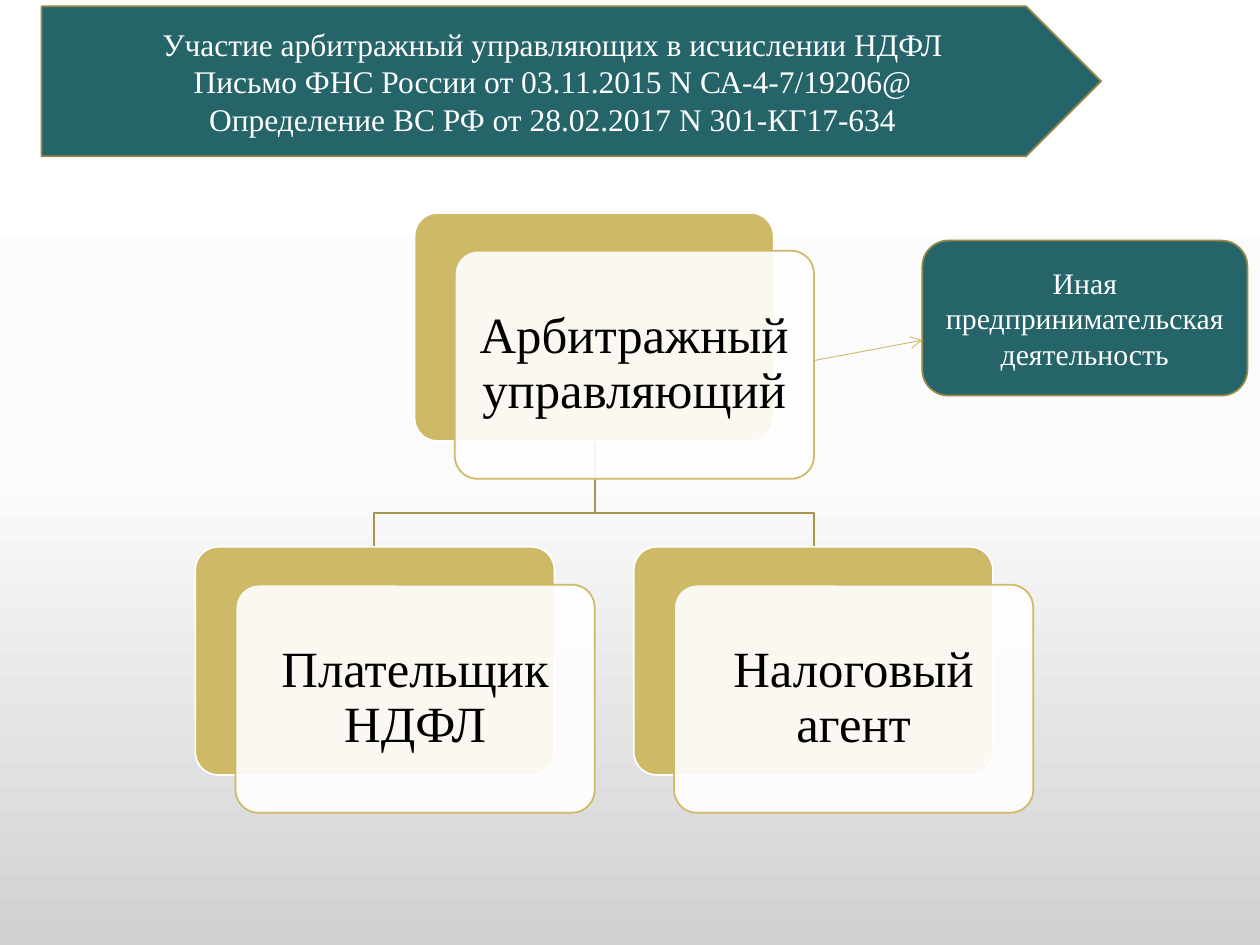
import pptx
import pptx.util
import pptx.dml.color
import pptx.enum.shapes
import pptx.enum.text
import pptx.oxml
import pptx.oxml.ns
import lxml.etree

Inches, Pt = pptx.util.Inches, pptx.util.Pt
Kind = pptx.enum.shapes.MSO_SHAPE
qn = pptx.oxml.ns.qn

HUES = {
    "teal": "256569", "edge": "98894B", "gold": "CEB966", "wire": "A59452",
    "white": "FFFFFF", "black": "000000", "mist": "FBFBFB", "gray": "D1D1D1",
}


def hue(name):
    return pptx.dml.color.RGBColor.from_string(HUES[name])


class Deck:
    face = "Times New Roman"

    def __init__(self, wide, high):
        self.prs = pptx.Presentation()
        self.prs.slide_width, self.prs.slide_height = Inches(wide), Inches(high)
        self.slide = self.prs.slides.add_slide(self.prs.slide_layouts[6])

    def back(self, stops):
        """Fill the background with a gradient from top to bottom."""
        fill = self.slide.background.fill
        fill.gradient()
        fill.gradient_angle = 270
        row = self.slide.element.find(".//" + qn("a:gsLst"))
        for old in list(row):
            row.remove(old)
        for place, name in stops:
            stop = lxml.etree.SubElement(row, qn("a:gs"), pos=str(place * 1000))
            lxml.etree.SubElement(stop, qn("a:srgbClr"), val=HUES[name])

    def pen(self, line, name, width=1):
        line.color.rgb = hue(name)
        line.width = Pt(width)

    def text(self, shape, lines, size, name, inset=None, form=None):
        frame = shape.text_frame
        look = {"word_wrap": True,
                "vertical_anchor": pptx.enum.text.MSO_ANCHOR.MIDDLE}
        if inset is not None:
            for side in ("left", "top", "right", "bottom"):
                look["margin_" + side] = Inches(inset)
        for key, val in look.items():
            setattr(frame, key, val)
        rules = {"alignment": pptx.enum.text.PP_ALIGN.CENTER, **(form or {})}
        for i, line in enumerate(lines):
            para = frame.add_paragraph() if i else frame.paragraphs[0]
            for key, val in rules.items():
                setattr(para, key, val)
            run = para.add_run()
            run.text = line
            for key, val in {"name": self.face, "size": Pt(size)}.items():
                setattr(run.font, key, val)
            run.font.color.rgb = hue(name)

    def box(self, kind, area, fill, edge, bend=None, alpha=None):
        shape = self.slide.shapes.add_shape(kind, *map(Inches, area))
        shape.shadow.inherit = False
        shape.fill.solid()
        shape.fill.fore_color.rgb = hue(fill)
        self.pen(shape.line, edge)
        if bend is not None:
            shape.adjustments[0] = bend
        if alpha is not None:
            tint = shape.element.spPr.find(qn("a:solidFill"))[0]
            lxml.etree.SubElement(tint, qn("a:alpha"), val=str(alpha * 1000))
        return shape

    def card(self, left, top, label):
        """A gold plate, a clear sheet shifted over it, and its label."""
        wide, high, pad = 2.85, 1.81, 0.05
        self.box(Kind.ROUNDED_RECTANGLE, (left, top, wide, high),
                 "gold", "white", 0.1)
        left, top = left + 0.32, top + 0.3
        self.box(Kind.ROUNDED_RECTANGLE, (left, top, wide, high),
                 "white", "gold", 0.1, 90)
        area = (left + pad, top + pad, wide - 2 * pad, high - 2 * pad)
        note = self.slide.shapes.add_textbox(*map(Inches, area))
        self.text(note, [label], 29, "black", 0.12,
                  {"line_spacing": 0.9, "space_after": Pt(10)})

    def wire(self, spots):
        """An open line with square corners."""
        first, *rest = [tuple(map(Inches, spot)) for spot in spots]
        trace = self.slide.shapes.build_freeform(*first)
        trace.add_line_segments(rest, close=False)
        shape = trace.convert_to_shape()
        shape.shadow.inherit = False
        shape.fill.background()
        self.pen(shape.line, "wire")

    def arrow(self, start, end):
        line = self.slide.shapes.add_connector(
            pptx.enum.shapes.MSO_CONNECTOR.STRAIGHT, *map(Inches, start + end))
        self.pen(line.line, "gold", 0.5)
        props = line.element.spPr
        lxml.etree.SubElement(props.find(qn("a:ln")), qn("a:tailEnd"), type="arrow")
        lxml.etree.SubElement(props, qn("a:effectLst"))


def main():
    deck = Deck(10, 7.5)
    deck.back([(0, "white"), (50, "mist"), (100, "gray")])

    # Title banner
    title = deck.box(Kind.PENTAGON, (0.33, 0.05, 8.41, 1.19), "teal", "edge")
    deck.text(title, ["Участие арбитражный управляющих в исчислении НДФЛ",
                      "Письмо ФНС России от 03.11.2015 N СА-4-7/19206@",
                      "Определение ВС РФ от 28.02.2017 N 301-КГ17-634"],
              18, "white")

    # Branches from the manager down to the two roles
    stem, fork, low = 4.72, 4.07, 4.34
    for foot in (6.46, 2.97):
        deck.wire([(stem, 3.51), (stem, fork), (foot, fork), (foot, low)])

    # Manager and roles
    for left, top, label in ((3.29, 1.69, "Арбитражный управляющий"),
                             (1.55, low, "Плательщик НДФЛ"),
                             (5.03, low, "Налоговый агент")):
        deck.card(left, top, label)

    # Other business
    deck.arrow((6.47, 2.86), (7.32, 2.7))
    side = deck.box(Kind.ROUNDED_RECTANGLE, (7.32, 1.91, 2.58, 1.23),
                    "teal", "edge")
    deck.text(side, ["Иная предпринимательская деятельность"], 17, "white")

    deck.prs.save("out.pptx")


if __name__ == "__main__":
    main()
